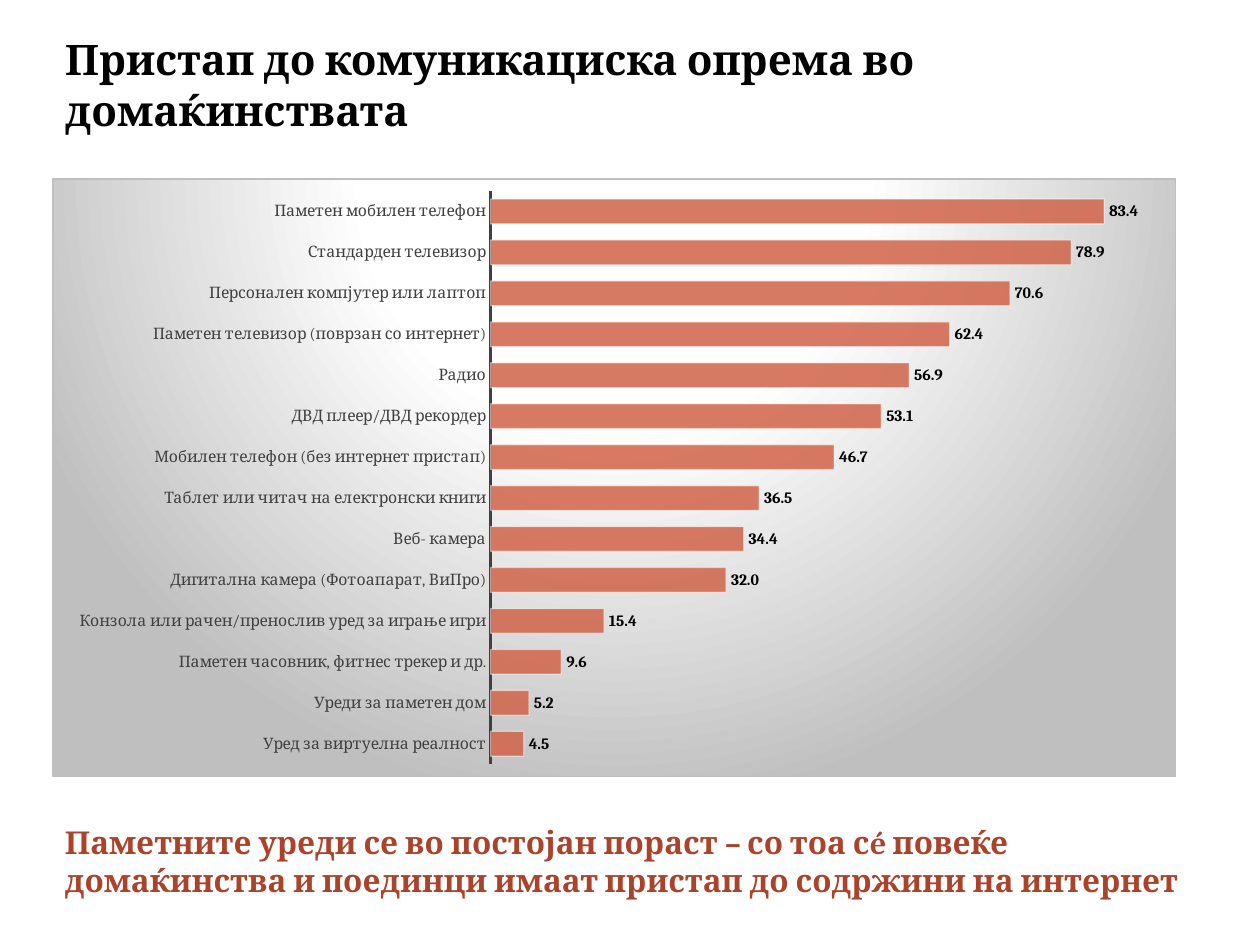
from pptx import Presentation
from pptx.chart.data import CategoryChartData
from pptx.dml.color import RGBColor
from pptx.enum.chart import XL_CHART_TYPE, XL_LABEL_POSITION, XL_TICK_MARK
from pptx.enum.text import MSO_ANCHOR, MSO_AUTO_SIZE, PP_ALIGN
from pptx.oxml import parse_xml
from pptx.oxml.ns import nsdecls
from pptx.util import Pt

BAR = XL_CHART_TYPE.BAR_CLUSTERED
OUTSIDE = XL_LABEL_POSITION.OUTSIDE_END
NO_TICK = XL_TICK_MARK.NONE
MIDDLE = MSO_ANCHOR.MIDDLE
NO_AUTOFIT = MSO_AUTO_SIZE.NONE
LEFT = PP_ALIGN.LEFT

FONT = "Cambria"
TITLE = "Пристап до комуникациска опрема во домаќинствата"
MESSAGE = ("Паметните уреди се во постојан пораст – со тоа сé повеќе "
           "домаќинства и поединци имаат пристап до содржини на интернет")
EQUIPMENT = [
    ("Уред за виртуелна реалност", 4.5),
    ("Уреди за паметен дом", 5.2),
    ("Паметен часовник, фитнес трекер и др.", 9.6),
    ("Конзола или рачен/пренослив уред за играње игри", 15.4),
    ("Дигитална камера (Фотоапарат, ВиПро)", 32.0),
    ("Веб- камера", 34.4),
    ("Таблет или читач на електронски книги", 36.5),
    ("Мобилен телефон (без интернет пристап)", 46.7),
    ("ДВД плеер/ДВД рекордер", 53.1),
    ("Радио", 56.9),
    ("Паметен телевизор (поврзан со интернет)", 62.4),
    ("Персонален компјутер или лаптоп", 70.6),
    ("Стандарден телевизор", 78.9),
    ("Паметен мобилен телефон", 83.4),
]
TITLE_AREA = (30, 12, 678, 72)
CHART_AREA = (30, 102, 642, 342)
MESSAGE_AREA = (30, 456, 666, 72)
PLOT_LAYOUT = {"x": 0.39, "y": 0.02, "w": 0.59, "h": 0.96}
BACKGROUND_STOPS = [(0, "FFFFFF"), (39, "FFFFFF"), (100, "BFBFBF")]


def color(value):
    return RGBColor.from_string(value)


def style_font(font, size, value, bold=False):
    font.name = FONT
    font.size = Pt(size)
    font.bold = bold
    font.color.rgb = color(value)


def place(shape, area):
    shape.left, shape.top, shape.width, shape.height = map(Pt, area)


def write_text(shape, area, text, size, value):
    place(shape, area)
    frame = shape.text_frame
    frame.text = text
    frame.word_wrap = True
    frame.auto_size = NO_AUTOFIT
    frame.vertical_anchor = MIDDLE
    para = frame.paragraphs[0]
    para.alignment = LEFT
    for span in para.runs:
        style_font(span.font, size, value, bold=True)


def set_alpha(color_element, percent):
    color_element.append(parse_xml(
        f'<a:alpha {nsdecls("a")} val="{percent * 1000}"/>'))


def set_chart_background(chart):
    stops = "".join(
        f'<a:gs pos="{position * 1000}"><a:srgbClr val="{value}"/></a:gs>'
        for position, value in BACKGROUND_STOPS)
    chart.element.xpath("c:chart")[0].addnext(parse_xml(
        f'<c:spPr {nsdecls("c", "a")}><a:gradFill><a:gsLst>{stops}</a:gsLst>'
        '<a:path path="circle"><a:fillToRect l="50000" t="-80000" r="50000" b="180000"/>'
        '</a:path></a:gradFill><a:ln w="9525"><a:solidFill><a:srgbClr val="BFBFBF"/>'
        '</a:solidFill></a:ln></c:spPr>'))


def set_plot_layout(chart):
    area = chart.element.xpath("c:chart/c:plotArea")[0]
    for layout in area.xpath("c:layout"):
        area.remove(layout)
    modes = "".join(f'<c:{side}Mode val="edge"/>' for side in "xy")
    sizes = "".join(f'<c:{key} val="{value}"/>' for key, value in PLOT_LAYOUT.items())
    area.insert(0, parse_xml(
        f'<c:layout {nsdecls("c")}><c:manualLayout><c:layoutTarget val="inner"/>'
        f'{modes}{sizes}</c:manualLayout></c:layout>'))


def add_equipment_chart(page):
    data = CategoryChartData(number_format="0.0")
    data.categories = [name for name, _ in EQUIPMENT]
    data.add_series("Series 1", [share for _, share in EQUIPMENT])
    chart = page.shapes.add_chart(BAR, *map(Pt, CHART_AREA), data).chart
    chart.has_title = False
    chart.has_legend = False
    style_font(chart.font, 10, "000000")

    names = chart.category_axis
    names.major_tick_mark = NO_TICK
    names.minor_tick_mark = NO_TICK
    names.has_major_gridlines = False
    names.format.line.color.rgb = color("404040")
    names.format.line.width = Pt(1.5)
    style_font(names.tick_labels.font, 9, "404040")

    shares = chart.value_axis
    shares.minimum_scale = 0
    shares.maximum_scale = 90
    shares.has_major_gridlines = False
    shares.visible = False

    plot = chart.plots[0]
    plot.gap_width = 65
    plot.vary_by_categories = False
    series = plot.series[0]
    series.format.fill.solid()
    series.format.fill.fore_color.rgb = color("D16349")
    series.format.line.color.rgb = color("FFFFFF")
    series.format.line.width = Pt(0.75)
    set_alpha(chart.element.xpath(".//c:ser/c:spPr/a:solidFill/a:srgbClr")[0], 85)
    set_alpha(chart.element.xpath(".//c:ser/c:spPr/a:ln/a:solidFill/a:srgbClr")[0], 50)

    labels = series.data_labels
    labels.show_value = True
    labels.position = OUTSIDE
    labels.number_format = "0.0"
    labels.number_format_is_linked = False
    style_font(labels.font, 9, "000000", bold=True)

    set_plot_layout(chart)
    set_chart_background(chart)


def main():
    deck = Presentation()
    deck.slide_width = Pt(720)
    deck.slide_height = Pt(540)
    page = deck.slides.add_slide(deck.slide_layouts[5])
    write_text(page.shapes.title, TITLE_AREA, TITLE, 24, "000000")
    add_equipment_chart(page)
    box = page.shapes.add_textbox(*map(Pt, MESSAGE_AREA))
    write_text(box, MESSAGE_AREA, MESSAGE, 18, "A9432B")
    deck.save("out.pptx")


if __name__ == "__main__":
    main()
